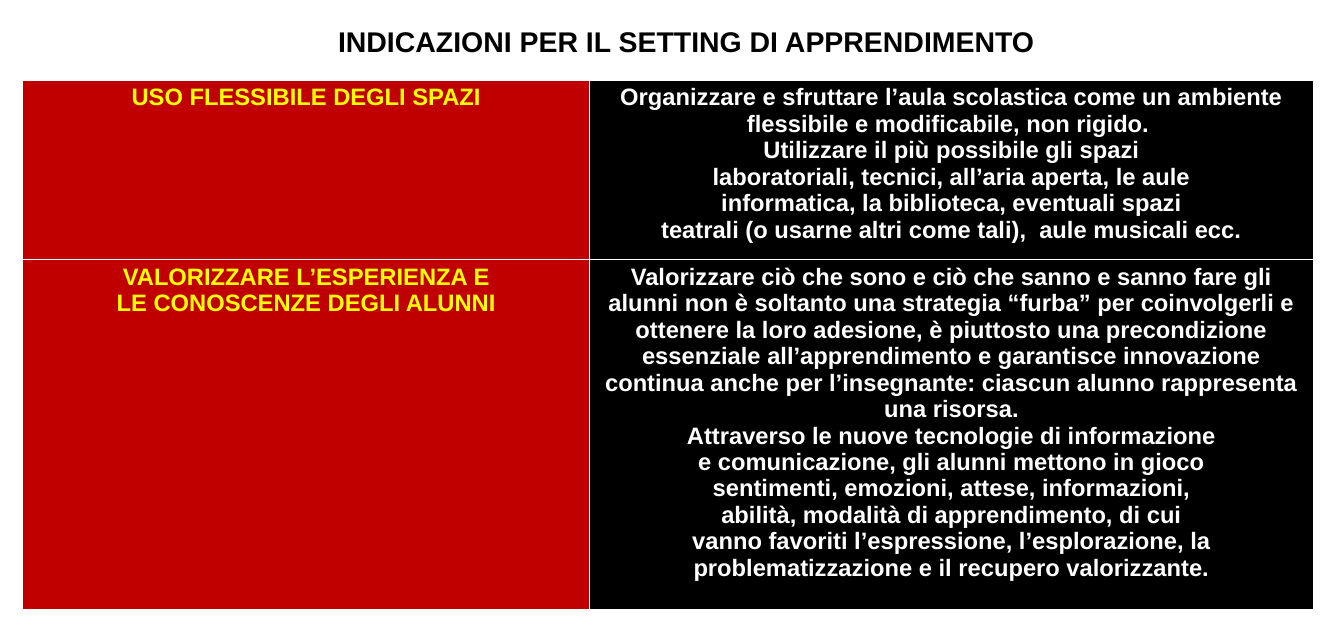
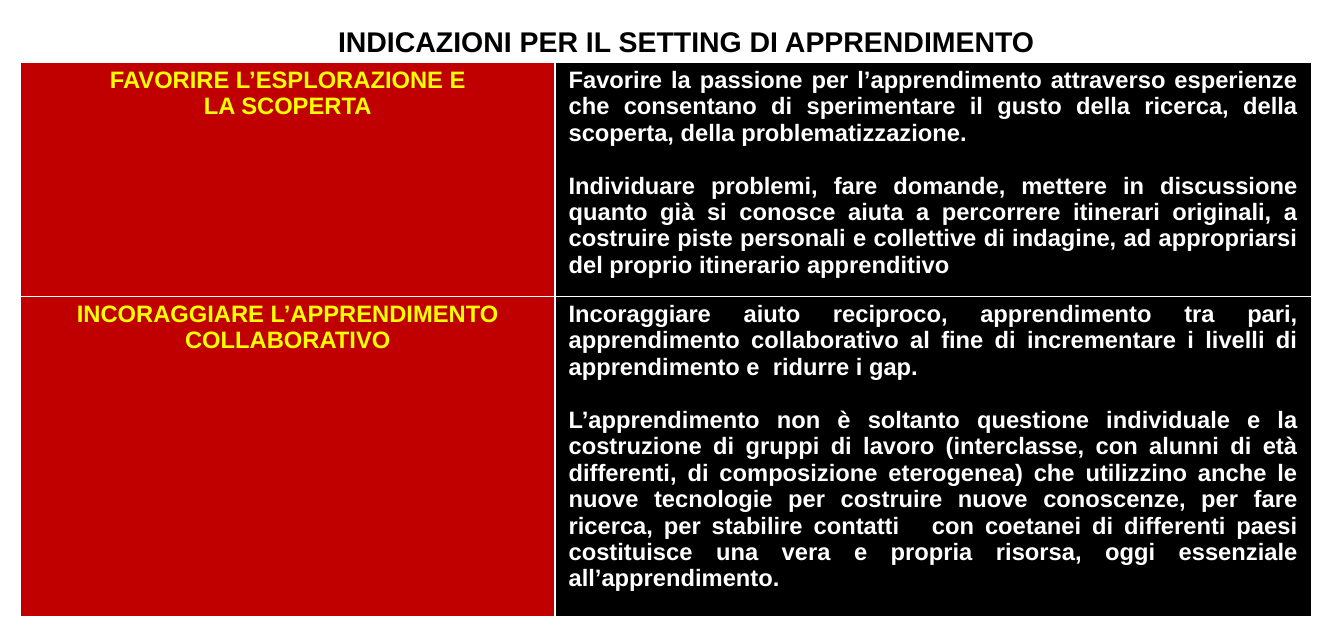
import pptx
import pptx.util
import pptx.dml.color
import pptx.enum.text
import pptx.oxml
import pptx.oxml.ns

Pt = pptx.util.Pt
ALIGN = pptx.enum.text.PP_ALIGN

COLORS = {"black": "000000", "white": "FFFFFF", "red": "C00000", "yellow": "FFFF00"}
TITLE = "INDICAZIONI PER IL SETTING DI APPRENDIMENTO"
TITLE_FONT = {"name": "Arial", "size": Pt(24), "bold": True}
CELL_FONT = {"name": "Arial", "size": Pt(20), "bold": True}
CELL_MARGINS = {"margin_left": Pt(11.5), "margin_right": Pt(11.5),
                "margin_top": Pt(3.6), "margin_bottom": Pt(3.6)}
TABLE_FLAGS = {"first_row": False, "horz_banding": False}

SLIDES = [
    {
        "title": (162, 16.5, 834, 36),
        "corner": (19.4, 67.7),
        "columns": (478, 611),
        "heights": (151.4, 295),
        "body": {"alignment": ALIGN.CENTER},
        "gap": 0,
        "rows": [
            (["USO FLESSIBILE DEGLI SPAZI"],
             ["Organizzare e sfruttare l’aula scolastica come un ambiente flessibile e modificabile, non rigido. ",
              "Utilizzare il più possibile gli spazi",
              "laboratoriali, tecnici, all’aria aperta, le aule",
              "informatica, la biblioteca, eventuali spazi",
              "teatrali (o usarne altri come tali),  aule musicali ecc."]),
            (["VALORIZZARE L’ESPERIENZA E", "LE CONOSCENZE DEGLI ALUNNI"],
             ["Valorizzare ciò che sono e ciò che sanno e sanno fare gli alunni non è soltanto "
              "una strategia “furba” per coinvolgerli e ottenere la loro adesione, è piuttosto "
              "una precondizione essenziale all’apprendimento e garantisce innovazione continua "
              "anche per l’insegnante: ciascun alunno rappresenta una risorsa.",
              "Attraverso le nuove tecnologie di informazione",
              "e comunicazione, gli alunni mettono in gioco",
              "sentimenti, emozioni, attese, informazioni,",
              "abilità, modalità di apprendimento, di cui",
              "vanno favoriti l’espressione, l’esplorazione, la",
              "problematizzazione e il recupero valorizzante."]),
        ],
    },
    {
        "title": (163, 16.5, 832, 36),
        "corner": (17.3, 52.8),
        "columns": (451, 638.5),
        "heights": (185.4, 252),
        "body": {"alignment": ALIGN.JUSTIFY},
        "gap": 22.3,
        "rows": [
            (["FAVORIRE L’ESPLORAZIONE E", "LA SCOPERTA"],
             ["Favorire la passione per l’apprendimento attraverso esperienze che consentano di "
              "sperimentare il gusto della ricerca, della scoperta, della problematizzazione.",
              "Individuare problemi, fare domande, mettere in discussione quanto già si conosce "
              "aiuta a percorrere itinerari originali, a costruire piste personali e collettive "
              "di indagine, ad appropriarsi del proprio itinerario apprenditivo"]),
            (["INCORAGGIARE L’APPRENDIMENTO", "COLLABORATIVO"],
             ["Incoraggiare aiuto reciproco, apprendimento tra pari, apprendimento collaborativo "
              "al fine di incrementare i livelli di apprendimento e  ridurre i gap. ",
              "L’apprendimento non è soltanto questione individuale e la costruzione di gruppi di "
              "lavoro (interclasse, con alunni di età differenti, di composizione eterogenea) che "
              "utilizzino anche le nuove tecnologie per costruire nuove conoscenze, per fare "
              "ricerca, per stabilire contatti   con coetanei di differenti paesi costituisce una "
              "vera e propria risorsa, oggi essenziale all’apprendimento."]),
        ],
    },
]


def rgb(name):
    return pptx.dml.color.RGBColor.from_string(COLORS[name])


def apply(target, values):
    for key, value in values.items():
        setattr(target, key, value)


def write(tf, lines, font, color, layout, gap=0):
    for i, line in enumerate(lines):
        p = tf.add_paragraph() if i else tf.paragraphs[0]
        apply(p, layout)
        p.space_before = Pt(gap if i else 0)
        r = p.add_run()
        r.text = line
        apply(r.font, font)
        r.font.color.rgb = rgb(color)


def add_title(s, box):
    tf = s.shapes.add_textbox(*map(Pt, box)).text_frame
    apply(tf, {"word_wrap": True, "auto_size": pptx.enum.text.MSO_AUTO_SIZE.SHAPE_TO_FIT_TEXT})
    write(tf, [TITLE], TITLE_FONT, "black", {"alignment": ALIGN.CENTER})


def style_cell(cell, fill):
    apply(cell, CELL_MARGINS)
    tcPr = cell._tc.get_or_add_tcPr()
    for side in "LRTB":
        tcPr.append(pptx.oxml.parse_xml(
            f'<a:ln{side} {pptx.oxml.ns.nsdecls("a")} w="{Pt(1)}"><a:solidFill>'
            f'<a:srgbClr val="{COLORS["white"]}"/></a:solidFill></a:ln{side}>'))
    cell.fill.solid()
    cell.fill.fore_color.rgb = rgb(fill)


def add_guide_table(s, data):
    columns, heights = data["columns"], data["heights"]
    table = s.shapes.add_table(len(heights), len(columns), *map(Pt, data["corner"]),
                               Pt(sum(columns)), Pt(sum(heights))).table
    apply(table, TABLE_FLAGS)
    for column, width in zip(table.columns, columns):
        column.width = Pt(width)
    for row, height, (heading, body) in zip(table.rows, heights, data["rows"]):
        row.height = Pt(height)
        left, right = row.cells
        style_cell(left, "red")
        style_cell(right, "black")
        write(left.text_frame, heading, CELL_FONT, "yellow", {"alignment": ALIGN.CENTER})
        write(right.text_frame, body, CELL_FONT, "white", data["body"], data["gap"])


def main():
    prs = pptx.Presentation()
    apply(prs, {"slide_width": Pt(1134), "slide_height": Pt(540)})
    for data in SLIDES:
        s = prs.slides.add_slide(prs.slide_layouts[6])
        add_title(s, data["title"])
        add_guide_table(s, data)
    prs.save("out.pptx")


if __name__ == "__main__":
    main()
